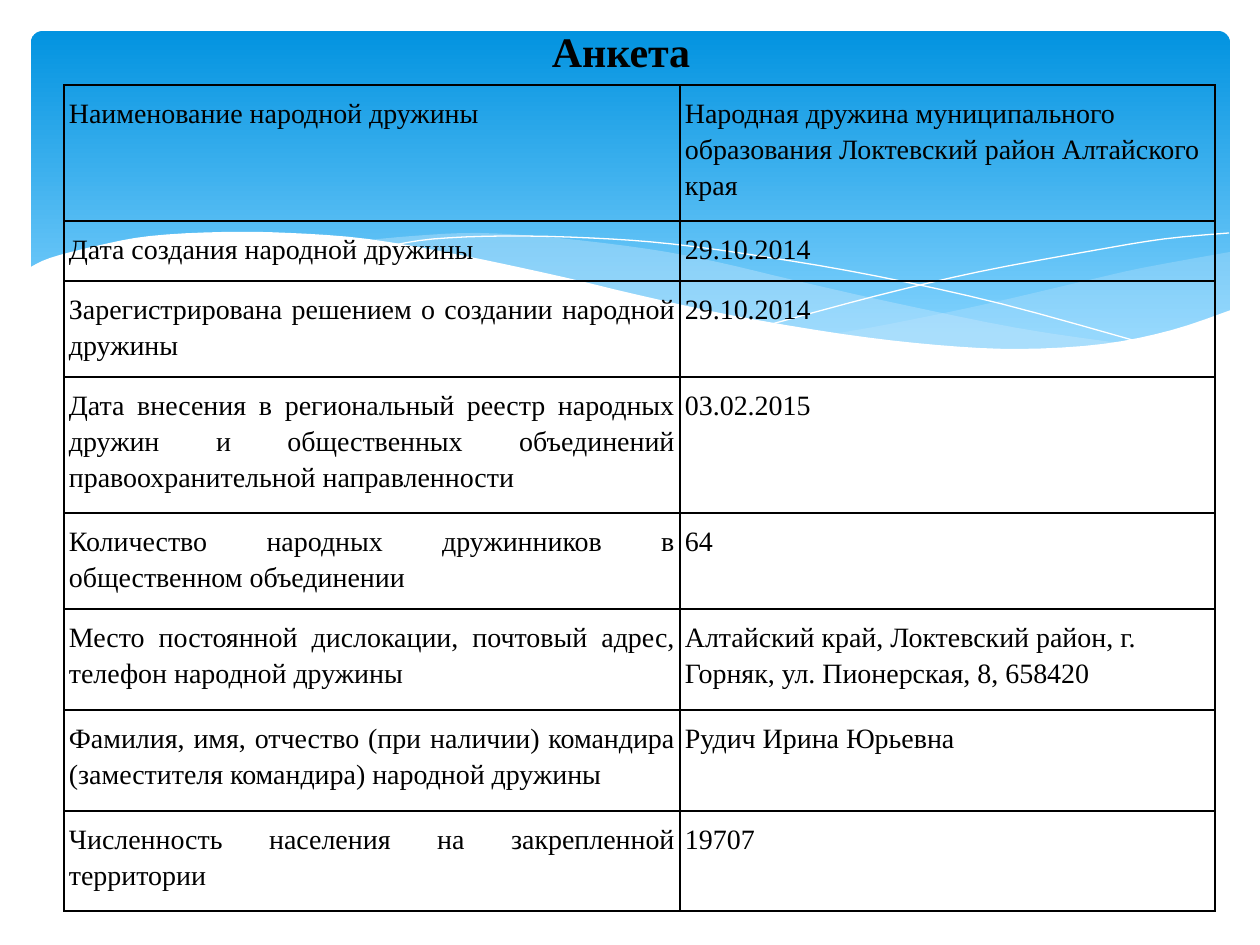
from dataclasses import dataclass
from itertools import pairwise
from typing import Optional

import lxml.etree
import pptx
import pptx.dml.color
import pptx.enum.shapes
import pptx.enum.text
import pptx.oxml.ns
import pptx.util

EMU_PER_PX = 914400 / 126
STEPS_PER_SPAN = 4

Point = tuple[float, float]
Edge = tuple[Point, ...]


@dataclass(frozen=True)
class Theme:
    font: str = "Times New Roman"
    title_size: int = 24
    cell_size: int = 16
    ink: str = "000000"
    paper: str = "FFFFFF"
    sky_top: str = "0293E0"
    sky_bottom: str = "83D3FE"
    mist: str = "C6E7FC"


@dataclass(frozen=True)
class Wave:
    edges: tuple[Edge, ...]
    fill: Optional[str] = None
    opacity: int = 100
    line: Optional[str] = None


@dataclass(frozen=True)
class Entry:
    label: str
    value: str
    height: int


THEME = Theme()

WAVES = (
    Wave((
        ((1230, 252), (1142, 268), (1085, 281), (982, 305), (890, 324), (833, 334)),
        ((833, 334), (888, 341), (954, 348), (1026, 350), (1099, 345), (1160, 334),
         (1230, 311)),
    ), fill=THEME.mist, opacity=29),
    Wave((
        ((1125, 344), (1017, 328), (890, 302), (793, 280), (717, 262), (648, 249),
         (557, 238), (479, 233), (413, 236), (360, 241)),
        ((360, 241), (431, 251), (509, 266), (566, 280), (668, 302), (757, 321),
         (838, 335), (910, 345), (989, 350), (1056, 350), (1125, 344)),
    ), fill=THEME.mist, opacity=40),
    Wave((
        ((389, 246), (433, 239), (505, 236), (591, 238), (672, 244), (766, 257),
         (876, 276), (1002, 304), (1143, 343)),
    ), line=THEME.paper),
    Wave((
        ((772, 324), (876, 296), (978, 272), (1091, 251), (1164, 239), (1229, 233)),
    ), line=THEME.paper),
    Wave((
        ((1231, 310), (1172, 330), (1103, 344), (1019, 349), (937, 345), (842, 334),
         (730, 315), (634, 294), (563, 277), (460, 255), (368, 239), (290, 233),
         (223, 232), (150, 236), (96, 246), (50, 258), (29, 268)),
        ((29, 415), (1231, 415)),
    ), fill=THEME.paper),
)

COLUMN_WIDTHS = (616, 535)

ENTRIES = (
    Entry("Наименование народной дружины",
          "Народная дружина муниципального образования Локтевский район Алтайского края", 136),
    Entry("Дата создания народной дружины", "29.10.2014", 60),
    Entry("Зарегистрирована решением о создании народной дружины", "29.10.2014", 96),
    Entry("Дата внесения в региональный реестр народных дружин и общественных "
          "объединений правоохранительной направленности", "03.02.2015", 136),
    Entry("Количество народных дружинников в общественном объединении", "64", 96),
    Entry("Место постоянной дислокации, почтовый адрес, телефон народной дружины",
          "Алтайский край, Локтевский район, г. Горняк, ул. Пионерская, 8, 658420", 101),
    Entry("Фамилия, имя, отчество (при наличии) командира (заместителя командира) "
          "народной дружины", "Рудич Ирина Юрьевна", 101),
    Entry("Численность населения на закрепленной территории", "19707", 100),
)


def px(length: float) -> pptx.util.Emu:
    return pptx.util.Emu(round(length * EMU_PER_PX))


def rgb(code: str) -> pptx.dml.color.RGBColor:
    return pptx.dml.color.RGBColor.from_string(code)


def write_text(frame, text: str, *, size: int, align, bold: bool = False,
               spacing: float = 1.0) -> None:
    frame.word_wrap = True
    para = frame.paragraphs[0]
    para.alignment = align
    para.line_spacing = spacing
    span = para.add_run()
    span.text = text
    span.font.name = THEME.font
    span.font.size = pptx.util.Pt(size)
    span.font.bold = bold
    span.font.color.rgb = rgb(THEME.ink)


def smooth_edge(knots: Edge) -> list[Point]:
    points = [knots[0]]
    padded = (knots[0], *knots, knots[-1])
    for index, (start, end) in enumerate(pairwise(knots)):
        before, after = padded[index], padded[index + 3]
        for step in range(1, STEPS_PER_SPAN + 1):
            t = step / STEPS_PER_SPAN
            points.append(tuple(
                0.5 * (2 * b + (c - a) * t + (2 * a - 5 * b + 4 * c - d) * t ** 2
                       + (3 * b - a - 3 * c + d) * t ** 3)
                for a, b, c, d in zip(before, start, end, after)
            ))
    return points


def draw_sky(page) -> None:
    sky = page.shapes.add_shape(pptx.enum.shapes.MSO_SHAPE.ROUNDED_RECTANGLE,
                                px(31), px(31), px(1199), px(340))
    sky.adjustments[0] = 0.034
    sky.shadow.inherit = False
    sky.line.fill.background()
    sky.fill.gradient()
    sky.fill.gradient_angle = 270
    stops = ((0, THEME.sky_top), (0.9, THEME.sky_bottom))
    for stop, (position, code) in zip(sky.fill.gradient_stops, stops):
        stop.position = position
        stop.color.rgb = rgb(code)


def draw_wave(page, wave: Wave) -> None:
    points = [(px(x), px(y)) for edge in wave.edges for x, y in smooth_edge(edge)]
    builder = page.shapes.build_freeform(*points[0], scale=1.0)
    builder.add_line_segments(points[1:], close=wave.fill is not None)
    shape = builder.convert_to_shape()
    shape.shadow.inherit = False
    if wave.fill:
        shape.fill.solid()
        shape.fill.fore_color.rgb = rgb(wave.fill)
        if wave.opacity < 100:
            color = shape.fill._xPr.find(".//" + pptx.oxml.ns.qn("a:srgbClr"))
            lxml.etree.SubElement(color, pptx.oxml.ns.qn("a:alpha"),
                                  val=str(wave.opacity * 1000))
    else:
        shape.fill.background()
    if wave.line:
        shape.line.color.rgb = rgb(wave.line)
        shape.line.width = 0
    else:
        shape.line.fill.background()


def border_cell(cell) -> None:
    properties = cell._tc.get_or_add_tcPr()
    for side in ("lnL", "lnR", "lnT", "lnB"):
        line = lxml.etree.SubElement(properties, pptx.oxml.ns.qn(f"a:{side}"),
                                     w=str(pptx.util.Pt(1)))
        fill = lxml.etree.SubElement(line, pptx.oxml.ns.qn("a:solidFill"))
        lxml.etree.SubElement(fill, pptx.oxml.ns.qn("a:srgbClr"), val=THEME.ink)


def draw_form(page, entries: tuple[Entry, ...]) -> None:
    height = sum(entry.height for entry in entries)
    table = page.shapes.add_table(len(entries), len(COLUMN_WIDTHS), px(64), px(85),
                                  px(sum(COLUMN_WIDTHS)), px(height)).table
    table.first_row = False
    table.horz_banding = False
    for column, width in zip(table.columns, COLUMN_WIDTHS):
        column.width = px(width)
    aligns = (pptx.enum.text.PP_ALIGN.JUSTIFY, pptx.enum.text.PP_ALIGN.LEFT)
    for row, entry in zip(table.rows, entries):
        row.height = px(entry.height)
        for cell, text, align in zip(row.cells, (entry.label, entry.value), aligns):
            cell.margin_left = cell.margin_right = px(5)
            cell.margin_top = cell.margin_bottom = px(9)
            border_cell(cell)
            cell.fill.background()
            write_text(cell.text_frame, text, size=THEME.cell_size, align=align, spacing=1.15)


def draw_title(page, text: str) -> None:
    box = page.shapes.add_textbox(px(54), px(16), px(1134), px(69))
    box.text_frame.vertical_anchor = pptx.enum.text.MSO_ANCHOR.MIDDLE
    write_text(box.text_frame, text, size=THEME.title_size, bold=True,
               align=pptx.enum.text.PP_ALIGN.CENTER)


def main() -> None:
    deck = pptx.Presentation()
    deck.slide_width, deck.slide_height = px(1260), px(945)
    page = deck.slides.add_slide(deck.slide_layouts[6])
    draw_sky(page)
    for wave in WAVES:
        draw_wave(page, wave)
    draw_form(page, ENTRIES)
    draw_title(page, "Анкета")
    deck.save("out.pptx")


if __name__ == "__main__":
    main()
